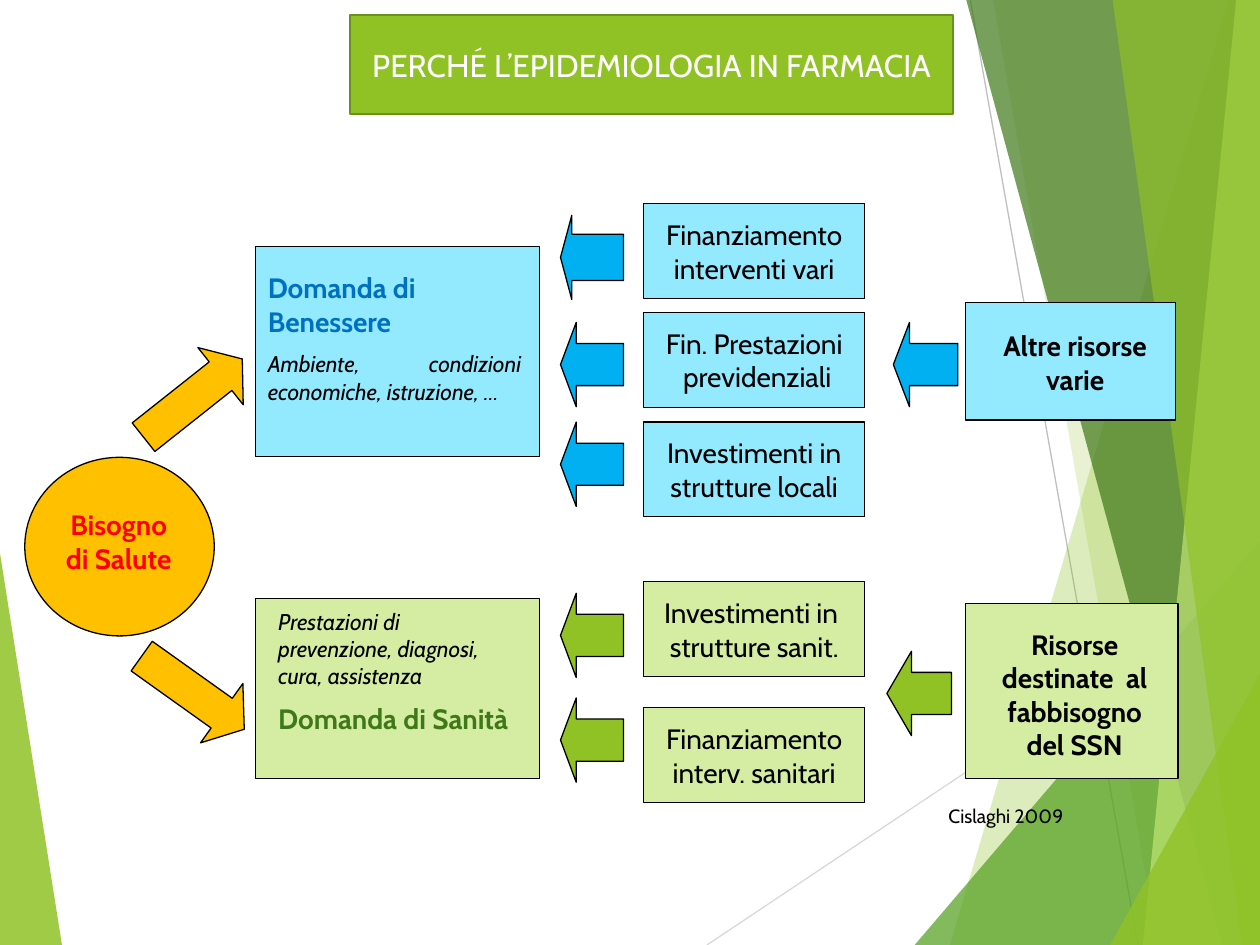
"""Build the slide on why epidemiology matters in pharmacy."""
from dataclasses import dataclass
from typing import NamedTuple

from lxml.etree import SubElement
from pptx import Presentation
from pptx.dml.color import RGBColor
from pptx.enum.shapes import MSO_CONNECTOR as Connector, MSO_SHAPE as Preset
from pptx.enum.text import MSO_ANCHOR as Anchor, PP_ALIGN as Align
from pptx.oxml.ns import qn
from pptx.util import Cm, Pt


@dataclass(frozen=True)
class Theme:
    font: str = "Cabin"
    black: str = "000000"
    white: str = "FFFFFF"
    red: str = "FF0000"
    blue_text: str = "0070C0"
    sky: str = "93EAFF"
    blue: str = "00B0F0"
    pale_green: str = "D5EDA2"
    green: str = "90C226"
    leaf: str = "54A021"
    lime: str = "C0E474"
    dark_green: str = "3F7819"
    edge_green: str = "6B901C"
    amber: str = "FFC000"
    light_grey: str = "D9D9D9"
    grey: str = "BFBFBF"
    title: float = 18
    heading: float = 16
    detail: float = 13
    source: float = 11
    outline: float = 0.75
    title_outline: float = 1.5
    paragraph_gap: float = 7


THEME = Theme()
WIDTH, HEIGHT = 25.4, 19.05


class Area(NamedTuple):
    left: float
    top: float
    width: float
    height: float

    def lengths(self) -> list:
        return [Cm(value) for value in self]


class Line(NamedTuple):
    text: str
    size: float = THEME.heading
    color: str = THEME.black
    bold: bool = False
    italic: bool = False
    align: Align = Align.CENTER


class Box(NamedTuple):
    area: Area
    fill: str
    lines: tuple = ()
    preset: Preset = Preset.RECTANGLE
    wrap: bool = False
    edge: str = THEME.black
    edge_width: float = THEME.outline


class Arrow(NamedTuple):
    area: Area
    fill: str
    adjustments: tuple = (0.5, 0.25)
    preset: Preset = Preset.LEFT_ARROW
    rotation: float = 0


class Label(NamedTuple):
    area: Area
    lines: tuple


class Facet(NamedTuple):
    points: tuple
    color: str
    opacity: int


class Ray(NamedTuple):
    start: tuple
    end: tuple
    color: str


RAYS = (
    Ray((14.25, HEIGHT), (WIDTH, 11.61), THEME.light_grey),
    Ray((19.56, 0), (22.94, HEIGHT), THEME.grey),
)
CORNERS = ((WIDTH, HEIGHT), (WIDTH, 0))
LEFT_FACET = Facet(((0, 11.15), (1.25, HEIGHT), (0, HEIGHT)), THEME.green, 85)
RIGHT_FACETS = (
    Facet(((24.77, 0), (19.15, HEIGHT), *CORNERS), THEME.green, 30),
    Facet(((20.02, 0), (23.34, HEIGHT), *CORNERS), THEME.green, 20),
    Facet(((18.44, HEIGHT), (WIDTH, 10.9), CORNERS[0]), THEME.leaf, 72),
    Facet(((19.48, 0), (24.64, HEIGHT), *CORNERS), THEME.dark_green, 70),
    Facet(((24.92, 0), (23.04, HEIGHT), *CORNERS), THEME.lime, 70),
    Facet(((22.43, 0), (25.04, HEIGHT), *CORNERS), THEME.green, 65),
    Facet(((22.38, HEIGHT), (WIDTH, 13.59), CORNERS[0]), THEME.green, 80),
)

FUNDING = (
    (4.11, THEME.sky, "Finanziamento", "interventi vari"),
    (6.3, THEME.sky, "Fin. Prestazioni", " previdenziali"),
    (8.51, THEME.sky, "Investimenti in", "strutture locali"),
    (11.73, THEME.pale_green, "Investimenti in ", "strutture sanit."),
    (14.27, THEME.pale_green, "Finanziamento", "interv. sanitari"),
)
BOXES = (
    Box(Area(0.5, 9.22, 3.82, 3.6), THEME.amber, preset=Preset.OVAL),
    Box(Area(5.15, 4.97, 5.73, 4.24), THEME.sky),
    Box(Area(5.15, 12.07, 5.73, 3.63), THEME.pale_green),
    *(Box(Area(12.98, top, 4.45, 1.91), fill, (Line(first), Line(second)))
      for top, fill, first, second in FUNDING),
    Box(Area(19.46, 6.1, 4.24, 2.37), THEME.sky),
    Box(Area(19.46, 12.16, 4.29, 3.54), THEME.pale_green),
)
TITLE = Box(Area(7.06, 0.3, 12.15, 2), THEME.green,
            (Line("PERCHÉ L’EPIDEMIOLOGIA IN FARMACIA", THEME.title, THEME.white),),
            wrap=True, edge=THEME.edge_green, edge_width=THEME.title_outline)

DEMAND_ARROWS = ((6.5, THEME.blue), (8.51, THEME.blue),
                 (11.96, THEME.green), (14.07, THEME.green))
NEED_ARROWS = ((7.29, 321.6), (13.23, 35.5))
ARROWS = (
    Arrow(Area(11.3, 4.34, 1.27, 1.7), THEME.blue, (0.55, 0.18)),
    *(Arrow(Area(11.3, top, 1.27, 1.7), fill) for top, fill in DEMAND_ARROWS),
    Arrow(Area(18.01, 6.5, 1.3, 1.7), THEME.blue),
    Arrow(Area(17.88, 13.13, 1.3, 1.7), THEME.green, (0.5, 0.38)),
    *(Arrow(Area(2.62, top, 2.54, 1.47), THEME.amber, (0.5, 0.38),
            Preset.RIGHT_ARROW, rotation) for top, rotation in NEED_ARROWS),
)
LABELS = (
    Label(Area(0.91, 10.11, 2.97, 1.63),
          (Line("Bisogno di Salute", color=THEME.red, bold=True),)),
    Label(Area(5.15, 5.33, 5.6, 3.58), (
        Line("Domanda di Benessere", color=THEME.blue_text, bold=True, align=Align.LEFT),
        Line("Ambiente, condizioni economiche, istruzione, …", THEME.detail,
             italic=True, align=Align.JUSTIFY))),
    Label(Area(5.36, 12.12, 5.28, 3.63), (
        Line("Prestazioni di prevenzione, diagnosi, cura, assistenza", THEME.detail,
             italic=True, align=Align.LEFT),
        Line("Domanda di Sanità", color=THEME.dark_green, bold=True, align=Align.LEFT))),
    Label(Area(19.76, 12.52, 3.81, 3),
          (Line("Risorse destinate  al fabbisogno del SSN", bold=True),)),
    Label(Area(19.63, 6.5, 4.09, 1.63), (Line("Altre risorse varie", bold=True),)),
    Label(Area(18.87, 16.08, 4.45, 0.74),
          (Line("Cislaghi 2009", THEME.source, align=Align.LEFT),)),
)


def paint(shape, fill: str, edge: str = THEME.black, width: float = THEME.outline) -> None:
    shape.shadow.inherit = False
    shape.fill.solid()
    shape.fill.fore_color.rgb = RGBColor.from_string(fill)
    shape.line.color.rgb = RGBColor.from_string(edge)
    shape.line.width = Pt(width)


def write(frame, lines: tuple, gap: float = 0) -> None:
    for index, line in enumerate(lines):
        paragraph = frame.add_paragraph() if index else frame.paragraphs[0]
        paragraph.alignment = line.align
        paragraph.space_before = Pt(gap if index else 0)
        run = paragraph.add_run()
        run.text = line.text
        formats = {"name": THEME.font, "size": Pt(line.size),
                   "bold": line.bold, "italic": line.italic}
        for name, value in formats.items():
            setattr(run.font, name, value)
        run.font.color.rgb = RGBColor.from_string(line.color)


def draw_facet(slide, facet: Facet) -> None:
    start, *others = [(Cm(x), Cm(y)) for x, y in facet.points]
    builder = slide.shapes.build_freeform(*start)
    builder.add_line_segments(others, close=True)
    shape = builder.convert_to_shape()
    paint(shape, facet.color)
    shape.line.fill.background()
    color = shape.fill._xPr.find(qn("a:solidFill"))[0]
    SubElement(color, qn("a:alpha"), val=str(facet.opacity * 1000))


def draw_ray(slide, ray: Ray) -> None:
    ends = [Cm(value) for value in (*ray.start, *ray.end)]
    connector = slide.shapes.add_connector(Connector.STRAIGHT, *ends)
    connector.line.color.rgb = RGBColor.from_string(ray.color)
    connector.line.width = Pt(THEME.outline)
    SubElement(connector._element.spPr, qn("a:effectLst"))


def draw_box(slide, box: Box) -> None:
    shape = slide.shapes.add_shape(box.preset, *box.area.lengths())
    paint(shape, box.fill, box.edge, box.edge_width)
    shape.text_frame.word_wrap = box.wrap
    shape.text_frame.vertical_anchor = Anchor.MIDDLE
    write(shape.text_frame, box.lines)


def draw_arrow(slide, arrow: Arrow) -> None:
    shape = slide.shapes.add_shape(arrow.preset, *arrow.area.lengths())
    paint(shape, arrow.fill)
    shape.rotation = arrow.rotation
    for index, value in enumerate(arrow.adjustments):
        shape.adjustments[index] = value


def draw_label(slide, label: Label) -> None:
    frame = slide.shapes.add_textbox(*label.area.lengths()).text_frame
    frame.word_wrap = True
    write(frame, label.lines, THEME.paragraph_gap)


def main() -> None:
    presentation = Presentation()
    presentation.slide_width, presentation.slide_height = Cm(WIDTH), Cm(HEIGHT)
    slide = presentation.slides.add_slide(presentation.slide_layouts[6])
    layers = ((draw_facet, (LEFT_FACET,)), (draw_ray, RAYS), (draw_facet, RIGHT_FACETS),
              (draw_box, BOXES), (draw_arrow, ARROWS), (draw_label, LABELS),
              (draw_box, (TITLE,)))
    for draw, items in layers:
        for item in items:
            draw(slide, item)
    presentation.save("out.pptx")


if __name__ == "__main__":
    main()
